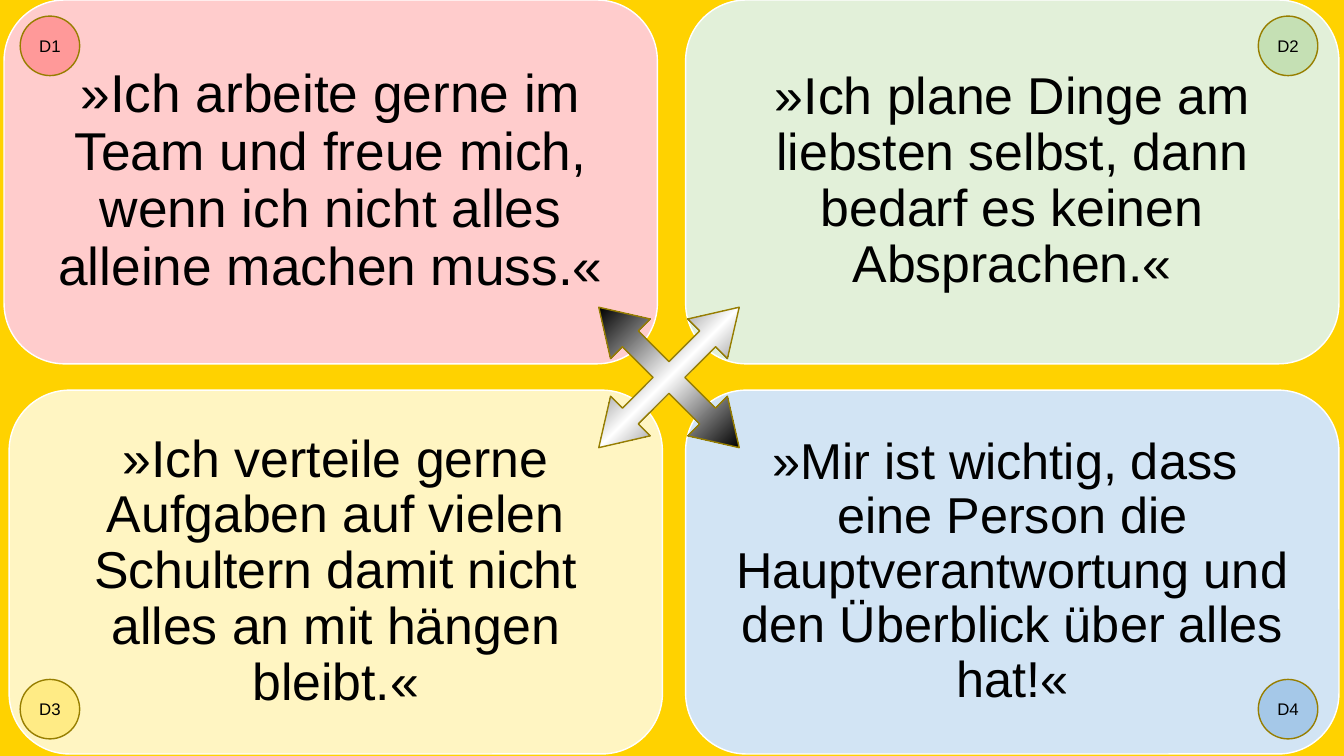
from lxml import etree
from pptx import Presentation
from pptx import util as u
from pptx.dml.color import RGBColor
from pptx.enum import shapes, text
from pptx.oxml.ns import qn

GOLD_LINE = "977E00"
BADGE = 0.59

# left, top, panel colour, statement, text size, inset
PANELS = [
    (0.04, 0, "FFCCCC", "»Ich arbeite gerne im Team und freue mich, "
     "wenn ich nicht alles alleine machen muss.«", 38, 0.16),
    (6.8, 0, "E2F0D9", "»Ich plane Dinge am liebsten selbst, "
     "dann bedarf es keinen Absprachen.«", 37, 0.15),
    (0.09, 3.87, "FFF5C2", "»Ich verteile gerne Aufgaben auf vielen Schultern "
     "damit nicht alles an mit hängen bleibt.«", 37, 0.15),
    (6.8, 3.87, "D2E4F4", "»Mir ist wichtig, dass \veine Person die "
     "Hauptverantwortung und den Überblick über alles hat!«", 36, 0.15),
]
BADGE_COLOURS = ["FF9999", "C5E0B4", "FFEB85", "A5C8E8"]


def colour(value):
    return RGBColor.from_string(value)


def add_filled(slide, kind, box, fill, line):
    part = slide.shapes.add_shape(kind, *(u.Inches(n) for n in box))
    part.shadow.inherit = False
    if fill:
        part.fill.solid()
        part.fill.fore_color.rgb = colour(fill)
    part.line.color.rgb = colour(line)
    part.line.width = u.Pt(1)
    return part


def write_centred(part, wording, size, inset, spacing=1.0):
    frame = part.text_frame
    frame.text = wording
    frame.word_wrap = True
    frame.vertical_anchor = text.MSO_ANCHOR.MIDDLE
    frame.margin_left = frame.margin_right = u.Inches(inset)
    frame.margin_top = frame.margin_bottom = u.Inches(inset)
    paragraph = frame.paragraphs[0]
    paragraph.alignment = text.PP_ALIGN.CENTER
    paragraph.line_spacing = spacing
    for run in paragraph.runs:
        run.font.name = "Arial"
        run.font.size = u.Pt(size)
        run.font.color.rgb = colour("000000")


def add_panel(slide, box, fill, statement, size, inset):
    panel = add_filled(slide, shapes.MSO_SHAPE.ROUNDED_RECTANGLE, box, fill, "FFFFFF")
    write_centred(panel, statement, size, inset, spacing=0.9)


def add_badge(slide, box, label, fill):
    badge = add_filled(slide, shapes.MSO_SHAPE.OVAL, box, fill, GOLD_LINE)
    write_centred(badge, label, 12, 0.05)


def add_cross_arrow(slide, box):
    arrow = add_filled(slide, shapes.MSO_SHAPE.QUAD_ARROW, box, None, GOLD_LINE)
    arrow.rotation = 45
    for index, value in enumerate((0.113, 0.141, 0.225)):
        arrow.adjustments[index] = value
    # Black to white and back to black, across the arrow
    arrow.fill.gradient()
    arrow.fill.gradient_angle = 0
    stops = arrow.fill._fill._gradFill.find(qn("a:gsLst"))
    for stop in list(stops):
        stops.remove(stop)
    for percent, shade in ((0, "000000"), (25, "000000"), (50, "FFFFFF"),
                           (75, "000000"), (100, "000000")):
        stop = etree.SubElement(stops, qn("a:gs"), pos=str(percent * 1000))
        etree.SubElement(stop, qn("a:srgbClr"), val=shade)


def build_quadrants(prs):
    slide = prs.slides.add_slide(prs.slide_layouts[6])
    slide.background.fill.solid()
    slide.background.fill.fore_color.rgb = colour("FFD200")

    # Statements
    for left, top, fill, statement, size, inset in PANELS:
        add_panel(slide, (left, top, 6.48, 3.61), fill, statement, size, inset)

    # Arrow in the middle
    add_cross_arrow(slide, (5.65, 2.76, 1.97, 1.97))

    # Badges in the corners
    for index, fill in enumerate(BADGE_COLOURS):
        row, column = divmod(index, 2)
        box = (0.2 + column * 12.28, 0.16 + row * 6.58, BADGE, BADGE)
        add_badge(slide, box, f"D{index + 1}", fill)


def main():
    prs = Presentation()
    prs.slide_width = u.Inches(13.33)
    prs.slide_height = u.Inches(7.5)
    build_quadrants(prs)
    prs.save("out.pptx")


if __name__ == "__main__":
    main()
